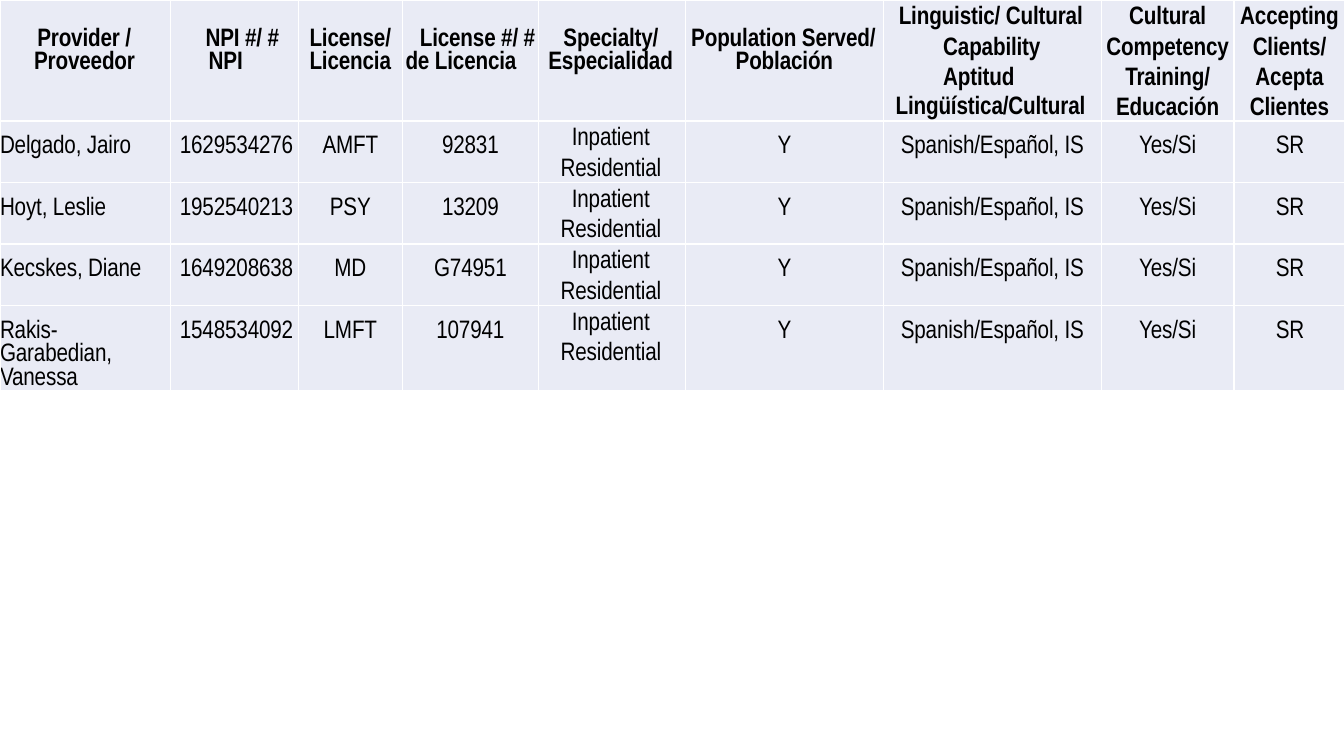
import pptx
import pptx.dml.color
import pptx.enum.text
import pptx.util
from lxml import etree
from pptx.oxml.ns import qn
from pptx.util import Cm, Pt

BLACK = pptx.dml.color.RGBColor(0x00, 0x00, 0x00)
WHITE = pptx.dml.color.RGBColor(0xFF, 0xFF, 0xFF)
PALE_BLUE = pptx.dml.color.RGBColor(0xE9, 0xEB, 0xF5)
FONT = "Arial Narrow"
LEFT = pptx.enum.text.PP_ALIGN.LEFT
CENTER = pptx.enum.text.PP_ALIGN.CENTER
RIGHT = pptx.enum.text.PP_ALIGN.RIGHT

COLUMN_WIDTHS = [4.29, 3.23, 2.62, 3.43, 3.7, 5.0, 5.48, 3.35, 2.77]
ROW_HEIGHTS = [3.05, 1.55, 1.55, 1.55, 1.62]
HEADER_TOP = 0.7
BODY_TOP = 0.36
LINE = 21.6

# Each heading: text, top margin in cm, paragraph format
HEADINGS = [
    ("Provider / Proveedor", HEADER_TOP, dict(indent=0.86, first=0.08)),
    ("NPI #/ # NPI", HEADER_TOP, dict(indent=0.97, first=-0.08)),
    ("License/ Licencia", HEADER_TOP, dict(indent=0.28)),
    ("License #/ # de Licencia", HEADER_TOP, dict(indent=0.08, first=0.36)),
    ("Specialty/ Especialidad", HEADER_TOP, dict(indent=0.25, first=0.38)),
    ("Population Served/ Población", HEADER_TOP, dict(indent=1.27, first=-1.12)),
    ("Linguistic/ Cultural Capability Aptitud", 0,
     dict(indent=1.5, first=-1.12, line=LINE)),
    ("Cultural Competency Training/ Educación", 0,
     dict(indent=0.1, right=0.1, align=CENTER, line=LINE)),
    ("Accepting Clients/ Acepta Clientes", 0,
     dict(indent=0.12, right=0.1, align=CENTER, line=LINE)),
]

BODY_FORMATS = [
    dict(right=0.25),
    dict(align=RIGHT, right=0.13),
    dict(align=CENTER),
    dict(align=CENTER),
    dict(indent=0.56, first=0.28, line=LINE),
    dict(align=CENTER),
    dict(align=CENTER),
    dict(align=CENTER),
    dict(align=RIGHT, right=1.0),
]

# Name, NPI number, licence, licence number
PROVIDERS = [
    ("Delgado, Jairo", "1629534276", "AMFT", "92831"),
    ("Hoyt, Leslie", "1952540213", "PSY", "13209"),
    ("Kecskes, Diane", "1649208638", "MD", "G74951"),
    ("Rakis-Garabedian, Vanessa", "1548534092", "LMFT", "107941"),
]
SHARED_DETAILS = ("Inpatient Residential", "Y", "Spanish/Español, IS", "Yes/Si", "SR")


def write(para, text, align=LEFT, bold=False, indent=0, first=0, right=0,
          line=None, before=None):
    """Fill one paragraph; indents are in cm, line and before in points."""
    para.alignment = align
    if line:
        para.line_spacing = Pt(line)
    if before:
        para.space_before = Pt(before)
    properties = para._p.get_or_add_pPr()
    for name, length in (("marL", indent), ("marR", right), ("indent", first)):
        properties.set(name, str(int(Cm(length))))
    span = para.add_run()
    span.text = text
    span.font.name = FONT
    span.font.size = Pt(18)
    span.font.bold = bold
    span.font.color.rgb = BLACK
    span._r.get_or_add_rPr().set("spc", "-10")


def add_border(cell, side, width):
    border = etree.SubElement(cell._tc.get_or_add_tcPr(), qn(f"a:ln{side}"),
                              w=str(int(Pt(width))))
    fill = etree.SubElement(border, qn("a:solidFill"))
    etree.SubElement(fill, qn("a:srgbClr"), val=str(WHITE))


def style_cell(cell, outer_sides, top):
    for side in "LRTB":
        add_border(cell, side, 0.5 if side in outer_sides else 1)
    cell.fill.solid()
    cell.fill.fore_color.rgb = PALE_BLUE
    cell.margin_left = cell.margin_right = cell.margin_bottom = 0
    cell.margin_top = Cm(top)


def outer_sides(row, column):
    """Name the sides of a cell that take the thin outer border."""
    sides = "T" if row == 0 else ""
    if column == 0:
        sides += "L"
    if column == len(COLUMN_WIDTHS) - 1:
        sides += "R"
    return sides


def add_provider_table(page):
    frame = page.shapes.add_table(len(ROW_HEIGHTS), len(COLUMN_WIDTHS), 0, 0,
                                  Cm(sum(COLUMN_WIDTHS)), Cm(sum(ROW_HEIGHTS)))
    table = frame.table
    table.first_row = table.horz_banding = False
    for column, width in zip(table.columns, COLUMN_WIDTHS):
        column.width = Cm(width)
    for row, height in zip(table.rows, ROW_HEIGHTS):
        row.height = Cm(height)
    return table


def fill_headings(table):
    for column, (text, top, layout) in enumerate(HEADINGS):
        cell = table.cell(0, column)
        style_cell(cell, outer_sides(0, column), top)
        write(cell.text_frame.paragraphs[0], text, bold=True, **layout)
    capability = table.cell(0, 6).text_frame
    write(capability.add_paragraph(), "Lingüística/Cultural", bold=True,
          indent=0.3, line=20.6)


def fill_providers(table):
    for row, provider in enumerate(PROVIDERS, start=1):
        for column, text in enumerate(provider + SHARED_DETAILS):
            layout = BODY_FORMATS[column]
            cell = table.cell(row, column)
            style_cell(cell, outer_sides(row, column),
                       0 if "line" in layout else BODY_TOP)
            write(cell.text_frame.paragraphs[0], text, **layout)


def main():
    deck = pptx.Presentation()
    deck.slide_width, deck.slide_height = Cm(33.87), Cm(19.05)
    page = deck.slides.add_slide(deck.slide_layouts[6])
    table = add_provider_table(page)
    fill_headings(table)
    fill_providers(table)
    deck.save("out.pptx")


if __name__ == "__main__":
    main()
